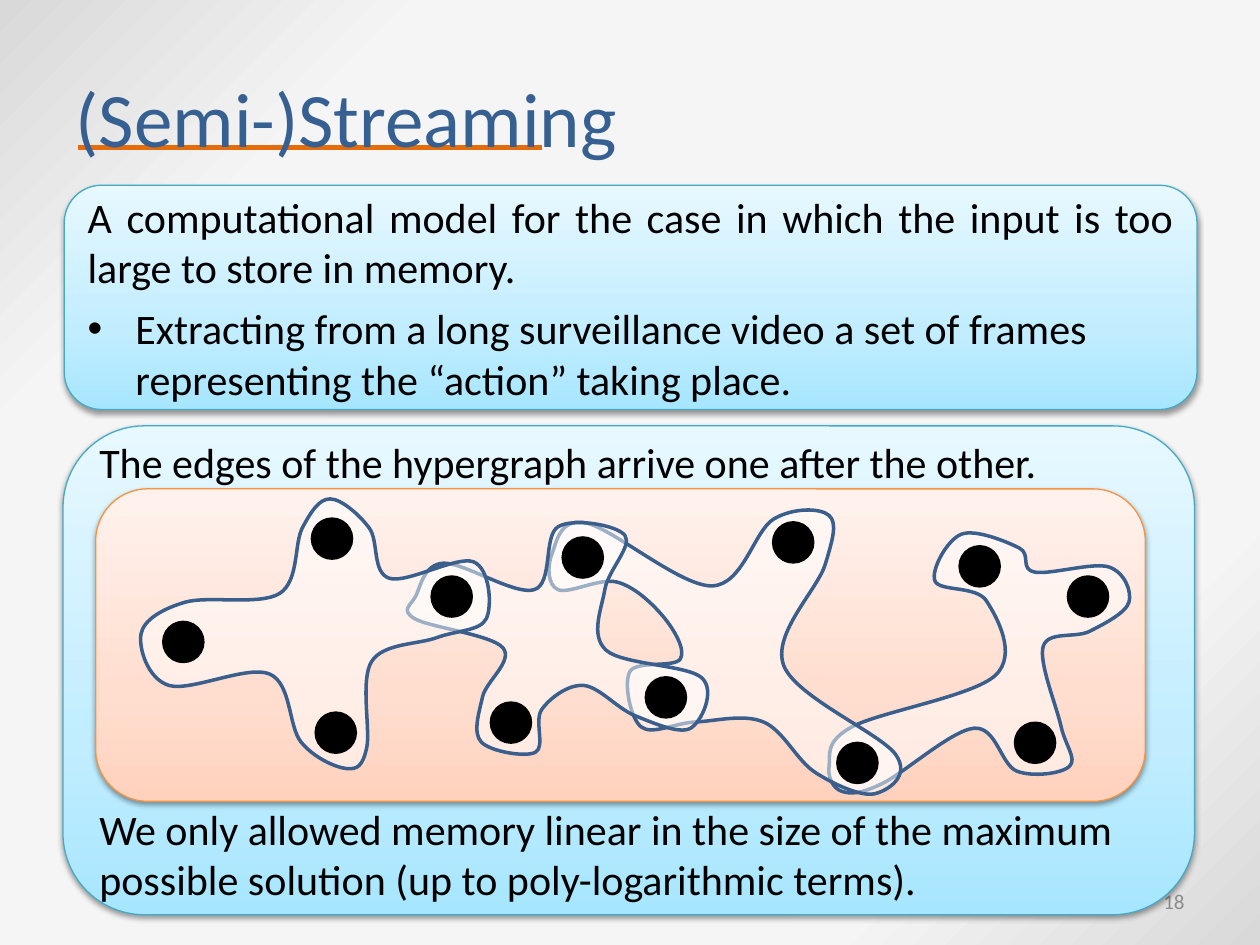
from lxml import etree
from pptx import Presentation
from pptx.dml.color import RGBColor
from pptx.enum.shapes import MSO_CONNECTOR, MSO_SHAPE
from pptx.enum.text import MSO_ANCHOR, PP_ALIGN
from pptx.oxml import parse_xml
from pptx.oxml.ns import nsdecls, qn
from pptx.util import Inches, Pt

ROUND, OVAL = MSO_SHAPE.ROUNDED_RECTANGLE, MSO_SHAPE.OVAL
LEFT, RIGHT, FULL = PP_ALIGN.LEFT, PP_ALIGN.RIGHT, PP_ALIGN.JUSTIFY
MIDDLE = MSO_ANCHOR.MIDDLE

HUES = {"title": "376092", "rule": "E46C0A", "page": "8C8C8C", "ink": "000000",
        "teal": "46AAC5", "amber": "F69240", "edge": "3A5F8C", "white": "FFFFFF"}
BACK = [(0, "D9D9D9"), (20, "F5F5F5"), (80, "F5F5F5"), (100, "D9D9D9")]
BLUE = [(0, "A7E6FF"), (35, "C1EDFF"), (100, "E7F8FF")]
PEACH = [(0, "FFD2BD"), (35, "FFDED0"), (100, "FFF2ED")]

# Points that each hyperedge outline passes through
EDGES = [
    [(6.58, 6.08), (6.76, 5.77), (7.9, 5.36), (7.83, 4.77), (7.42, 4.61),
     (7.63, 4.24), (8.09, 4.35), (8.21, 4.54), (8.8, 4.5), (8.96, 4.78),
     (8.65, 5.01), (8.28, 5.13), (8.42, 5.76), (8.49, 6.08), (8.07, 6.12),
     (7.73, 5.78), (7, 6.22), (6.68, 6.28)],
    [(4.38, 4.4), (4.65, 4.15), (5.65, 4.65), (6.14, 4.12), (6.58, 4.09),
     (6.55, 4.48), (6.22, 5.28), (7.11, 5.99), (6.94, 6.3), (6.47, 6.13),
     (6.06, 5.73), (5.52, 5.73), (5.09, 5.77), (5, 5.33), (5.4, 5.23),
     (5.27, 4.9), (4.9, 4.62), (4.43, 4.68)],
    [(3.3, 4.73), (3.52, 4.47), (4.24, 4.68), (4.43, 4.18), (4.96, 4.25),
     (4.8, 4.68), (4.81, 5.16), (5.57, 5.38), (5.48, 5.78), (5.04, 5.68),
     (4.63, 5.44), (4.3, 5.63), (4.25, 5.97), (3.82, 5.89), (3.83, 5.53),
     (3.99, 5.14), (3.29, 4.91)],
    [(1.34, 5.44), (1.12, 5.03), (1.47, 4.78), (2.22, 4.71), (2.4, 4.19),
     (2.62, 3.96), (2.93, 4.19), (3.09, 4.59), (3.76, 4.46), (3.86, 4.91),
     (3.47, 5.06), (2.95, 5.25), (2.91, 5.94), (2.75, 6.1), (2.39, 5.89),
     (2.14, 5.35)],
]
NODES = [(2.48, 4.12), (1.3, 4.94), (2.51, 5.66), (3.43, 4.58), (3.9, 5.58),
         (4.47, 4.27), (5.13, 5.38), (6.14, 4.15), (6.65, 5.9), (8.48, 4.58),
         (7.62, 4.34), (8.06, 5.74)]


def rgb(name):
    return RGBColor.from_string(HUES[name])


def blend(fill, root, stops, angle):
    """Give a fill its gradient stops; root is the element that holds it."""
    fill.gradient()
    fill.gradient_angle = angle
    group = root.find(".//" + qn("a:gsLst"))
    group.clear()
    for spot, hue in stops:
        stop = etree.SubElement(group, qn("a:gs"), pos=str(spot * 1000))
        etree.SubElement(stop, qn("a:srgbClr"), val=hue)


def outline(shape, hue, width):
    shape.line.color.rgb = rgb(hue)
    shape.line.width = Pt(width)


def write(para, text, size, hue, **form):
    """Fill a paragraph with one run and set its paragraph format."""
    for key, value in {"alignment": LEFT, **form}.items():
        setattr(para, key, value)
    run = para.add_run()
    run.text = text
    look = {"name": "Calibri", "size": Pt(size)}
    for key, value in look.items():
        setattr(run.font, key, value)
    run.font.color.rgb = rgb(hue)


def bullet(para, indent):
    props = para._p.get_or_add_pPr()
    props.set("marL", str(Inches(indent)))
    props.set("indent", str(-Inches(indent)))
    etree.SubElement(props, qn("a:buFont"), typeface="Arial")
    etree.SubElement(props, qn("a:buChar"), char="•")


def panel(shapes, box, stops, hue):
    shape = shapes.add_shape(ROUND, *map(Inches, box))
    blend(shape.fill, shape._element.spPr, stops, 90)
    outline(shape, hue, 0.75)
    shape._element.spPr.append(parse_xml(
        f'<a:effectLst {nsdecls("a")}><a:outerShdw blurRad="40000" dist="20000" '
        'dir="5400000" rotWithShape="0"><a:srgbClr val="000000">'
        '<a:alpha val="38000"/></a:srgbClr></a:outerShdw></a:effectLst>'))
    frame = shape.text_frame
    frame.word_wrap = True
    frame.vertical_anchor = MIDDLE
    return frame


def blob(shapes, knots):
    """Draw a closed smooth curve through the knots, half transparent."""
    pts = [(Inches(x), Inches(y)) for x, y in knots]
    pen = shapes.build_freeform(*pts[0])
    pen.add_line_segments(pts[1:] + pts[:1], close=True)
    shape = pen.convert_to_shape()
    shape.shadow.inherit = False
    shape.fill.solid()
    shape.fill.fore_color.rgb = rgb("white")
    tint = shape._element.spPr.find(qn("a:solidFill"))[0]
    etree.SubElement(tint, qn("a:alpha"), val="50000")
    outline(shape, "edge", 2)

    # Each handle is a sixth of the step between the neighbouring knots
    count = len(pts)
    lines = list(shape._element.iter(qn("a:lnTo")))
    for i, line in enumerate(lines[:count]):
        prev, start, end, after = (pts[(i + k) % count] for k in (-1, 0, 1, 2))
        out = [s + (e - p) / 6 for p, s, e in zip(prev, start, end)]
        back = [e - (a - s) / 6 for s, e, a in zip(start, end, after)]
        curve = etree.Element(qn("a:cubicBezTo"))
        for x, y in (out, back, end):
            etree.SubElement(curve, qn("a:pt"), x=str(round(x - shape.left)),
                             y=str(round(y - shape.top)))
        line.getparent().replace(line, curve)


def dot(shapes, x, y):
    shape = shapes.add_shape(OVAL, *map(Inches, (x, y, 0.31, 0.31)))
    shape.shadow.inherit = False
    shape.fill.solid()
    shape.fill.fore_color.rgb = rgb("ink")
    outline(shape, "ink", 2)


def heading(slide):
    title = slide.shapes.title
    title.left, title.top, title.width, title.height = map(
        Inches, (0.5, 0.3, 9, 1.25))
    title.text_frame.vertical_anchor = MIDDLE
    write(title.text_frame.paragraphs[0], "(Semi-)Streaming", 44, "title")
    rule = slide.shapes.add_connector(
        MSO_CONNECTOR.STRAIGHT, *map(Inches, (0.62, 1.17, 4.3, 1.17)))
    outline(rule, "rule", 3)
    etree.SubElement(rule._element.spPr, qn("a:effectLst"))
    title._element.addprevious(rule._element)  # the rule lies behind the title


def number(shapes):
    box = shapes.add_textbox(*map(Inches, (7.17, 6.95, 2.33, 0.4)))
    box.text_frame.word_wrap = True
    box.text_frame.vertical_anchor = MIDDLE
    write(box.text_frame.paragraphs[0], "18", 12, "page", alignment=RIGHT)


def main():
    deck = Presentation()
    deck.slide_width, deck.slide_height = Inches(10), Inches(7.5)
    slide = deck.slides.add_slide(deck.slide_layouts[5])
    shapes = slide.shapes
    blend(slide.background.fill, slide._element, BACK, 315)
    heading(slide)
    number(shapes)

    # Definition of the model
    frame = panel(shapes, (0.51, 1.47, 8.99, 1.78), BLUE, "teal")
    write(frame.paragraphs[0], "A computational model for the case in which the "
          "input is too large to store in memory.", 24, "ink",
          alignment=FULL, space_after=Pt(6))
    para = frame.add_paragraph()
    bullet(para, 0.38)
    write(para, "Extracting from a long surveillance video a set of frames "
          "representing the “action” taking place.", 24, "ink", space_after=Pt(6))

    # Hypergraph text, with room for the drawing between its paragraphs
    frame = panel(shapes, (0.5, 3.38, 8.98, 3.88), BLUE, "teal")
    write(frame.paragraphs[0],
          "The edges of the hypergraph arrive one after the other.", 24, "ink")
    write(frame.add_paragraph(), "We only allowed memory linear in the size of the "
          "maximum possible solution (up to poly-logarithmic terms).", 24, "ink",
          space_before=Pt(181))

    # Hypergraph drawing
    panel(shapes, (0.76, 3.88, 8.33, 2.48), PEACH, "amber")
    for knots in EDGES:
        blob(shapes, knots)
    group = shapes.add_group_shape()
    for x, y in NODES:
        dot(group.shapes, x, y)

    deck.save("out.pptx")


if __name__ == "__main__":
    main()
